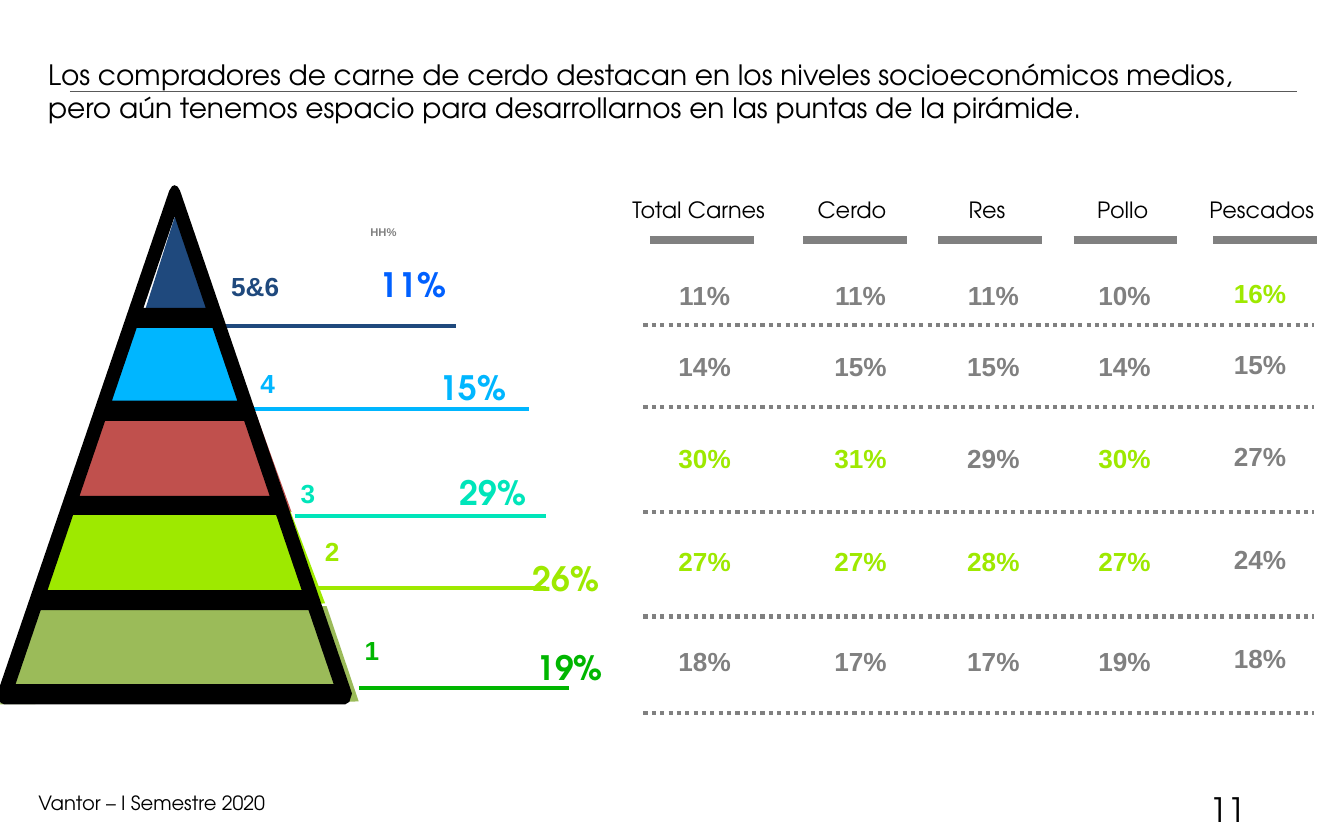
from dataclasses import dataclass

import lxml.etree
import pptx
import pptx.dml.color
import pptx.enum.dml
import pptx.enum.shapes
import pptx.enum.text
import pptx.oxml.ns
import pptx.util

Point = tuple[float, float]
Pt = pptx.util.Pt
SANS = "Arial"
GEO = "TeX Gyre Adventor"
HUES = {
    "black": "000000", "rule": "595959", "gray": "808080", "note": "828282",
    "navy": "1F497D", "blue": "0060FF", "sky": "00B6FF", "aqua": "00E5BA",
    "lime": "9EE900", "green": "00B600", "red": "C0504D", "olive": "9BBB59",
}


@dataclass
class Tier:
    name: str
    share: str
    hue: str
    tint: str
    label: Point
    value: Point
    start: float
    end: float
    base: float


@dataclass
class Column:
    name: str
    head: float
    bar: float
    mid: float
    shares: list[int]
    high: set[int]
    lift: float = 0


@dataclass
class Band:
    hue: str
    points: list[Point]


TIERS = [
    Tier("5&6", "11%", "navy", "blue", (123.8, 144.7), (203.3, 141.4), 96.5, 244.1, 174.7),
    Tier("4", "15%", "sky", "sky", (139.5, 196.6), (235.6, 196.6), 135.4, 283.4, 218.9),
    Tier("3", "29%", "aqua", "aqua", (161, 255.6), (246.2, 252.7), 157.9, 292.7, 276.5),
    Tier("2", "26%", "lime", "lime", (174, 287), (285.3, 298.8), 170.6, 292.7, 315.1),
    Tier("1", "19%", "green", "green", (195.3, 339.8), (287.3, 346.7), 192.2, 305, 368.6),
]
COLUMNS = [
    Column("Total Carnes", 374.3, 348.1, 377.5, [11, 14, 30, 27, 18], {2, 3}),
    Column("Cerdo", 456.4, 430.4, 461, [11, 15, 31, 27, 17], {2, 3}),
    Column("Res", 528.8, 502.6, 532.2, [11, 15, 29, 28, 17], {3}),
    Column("Pollo", 601.5, 575.2, 602.4, [10, 14, 30, 27, 19], {2, 3}),
    Column("Pescados", 676, 650, 675, [16, 15, 27, 24, 18], {0}, 1.2),
]
ROWS = [149.8, 187.9, 236.9, 292.3, 345.6]
DOTS = [174.2, 218.2, 274.5, 330.3, 382]
BANDS = [
    Band("navy", [(74.2, 177.1), (95.8, 109.4), (115.9, 175.7)]),
    Band("sky", [(72, 171.4), (119.5, 172.8), (136.8, 225.4), (55.4, 227.5)]),
    Band("red", [(35.3, 273.6), (156.2, 274.3), (137.5, 222.5), (54.7, 222.5)]),
    Band("lime", [(35.3, 273.6), (155.5, 273.6), (174.2, 323.3), (18.7, 324.7)]),
    Band("olive", [(192.2, 375.8), (0, 377.3), (18, 324.7), (175, 324.7)]),
]
FRAME = [
    (96.5, 102.2), (95.2, 100), (93.6, 99.2), (92.2, 99.8), (90.7, 102.2),
    (-0.7, 369.4), (-1.1, 372.5), (-0.4, 375.5), (0.7, 376.6), (2.2, 377.3),
    (185, 377.3), (187.2, 376), (188.6, 371.5), (187.9, 369.4),
]
GAPS = [(115.9, 164.9), (175.7, 214.6), (225.4, 265.7), (275.8, 316.1), (326.9, 366.5)]
AXIS = 93.6
SLOPE = 0.34


def tone(name: str) -> pptx.dml.color.RGBColor:
    return pptx.dml.color.RGBColor.from_string(HUES[name])


def write(slide, text: str, x: float, y: float, w: float, h: float, size: float,
          hue: str, font: str = GEO, bold: bool = False, center: bool = False,
          inset: bool = False, wrap: bool = False) -> None:
    frame = slide.shapes.add_textbox(Pt(x), Pt(y), Pt(w), Pt(h)).text_frame
    frame.word_wrap = wrap
    if not wrap:
        frame.auto_size = pptx.enum.text.MSO_AUTO_SIZE.SHAPE_TO_FIT_TEXT
    if not inset:
        frame.margin_left = frame.margin_right = 0
        frame.margin_top = frame.margin_bottom = 0
    para = frame.paragraphs[0]
    align = pptx.enum.text.PP_ALIGN
    para.alignment = align.CENTER if center else align.LEFT
    run = para.add_run()
    run.text = text
    run.font.name = font
    run.font.size = Pt(size)
    run.font.bold = bold
    run.font.color.rgb = tone(hue)


def rule(slide, start: float, end: float, y: float, hue: str,
         width: float = 2.25, dots: bool = False) -> None:
    line = slide.shapes.add_connector(
        pptx.enum.shapes.MSO_CONNECTOR.STRAIGHT, Pt(start), Pt(y), Pt(end), Pt(y))
    line.line.color.rgb = tone(hue)
    line.line.width = Pt(width)
    if dots:
        line.line.dash_style = pptx.enum.dml.MSO_LINE.ROUND_DOT
    lxml.etree.SubElement(line._element.spPr, pptx.oxml.ns.qn("a:effectLst"))


def outline(slide, rings: list[list[Point]], hue: str) -> None:
    loops = [[(Pt(x), Pt(y)) for x, y in ring] for ring in rings]
    form = slide.shapes.build_freeform(*loops[0][0])
    form.add_line_segments(loops[0][1:])
    for loop in loops[1:]:
        form.move_to(*loop[0])
        form.add_line_segments(loop[1:])
    shape = form.convert_to_shape()
    shape.shadow.inherit = False
    shape.fill.solid()
    shape.fill.fore_color.rgb = tone(hue)
    shape.line.fill.background()


def window(top: float, base: float) -> list[Point]:
    near, far = (SLOPE * (y - GAPS[0][0]) for y in (top, base))
    return [(AXIS - near, top), (AXIS - far, base), (AXIS + far, base), (AXIS + near, top)]


def draw_tier(slide, tier: Tier) -> None:
    rule(slide, tier.start, tier.end, tier.base, tier.hue)
    write(slide, tier.name, *tier.label, 8.7 * len(tier.name), 17.3, 14, tier.hue, SANS, True)
    write(slide, tier.share, *tier.value, 36, 21.6, 18, tier.tint, bold=True)


def draw_column(slide, col: Column) -> None:
    write(slide, col.name, col.head - 44.3, 105.1, 88.6, 14.4, 12, "black",
          center=True, wrap=True)
    rule(slide, col.bar, col.bar + 55.6, 128.6, "gray", 4.5)
    for i, (y, share) in enumerate(zip(ROWS, col.shares)):
        write(slide, f"{share}%", col.mid - 14.5, y - col.lift, 29, 17.3, 14,
              "lime" if i in col.high else "gray", SANS, True, True)


def main() -> None:
    deck = pptx.Presentation()
    deck.slide_width, deck.slide_height = Pt(720), Pt(450)
    slide = deck.slides.add_slide(deck.slide_layouts[6])
    rule(slide, 37.4, 694.8, 49, "rule", 0.75)
    write(slide, "Los compradores de carne de cerdo destacan en los niveles "
          "socioeconómicos medios, pero aún tenemos espacio para desarrollarnos "
          "en las puntas de la pirámide.", 18.7, 27.2, 670.3, 41, 15, "black",
          inset=True, wrap=True)
    for y in DOTS:
        rule(slide, 344.7, 704.2, y, "gray", dots=True)
    for tier in TIERS:
        draw_tier(slide, tier)
    write(slide, "HH%", 185.6, 117.4, 39.6, 17.3, 6, "note", SANS, True, True, True)
    for col in COLUMNS:
        draw_column(slide, col)
    for band in BANDS:
        outline(slide, [band.points], band.hue)
    outline(slide, [FRAME] + [window(*gap) for gap in GAPS], "black")
    write(slide, "11", 640.8, 419, 57.6, 13, 18, "black", inset=True, wrap=True)
    write(slide, "Vantor – I Semestre 2020", 13.4, 420.2, 138.2, 20.2, 10.5, "black",
          inset=True)
    deck.save("out.pptx")


if __name__ == "__main__":
    main()
